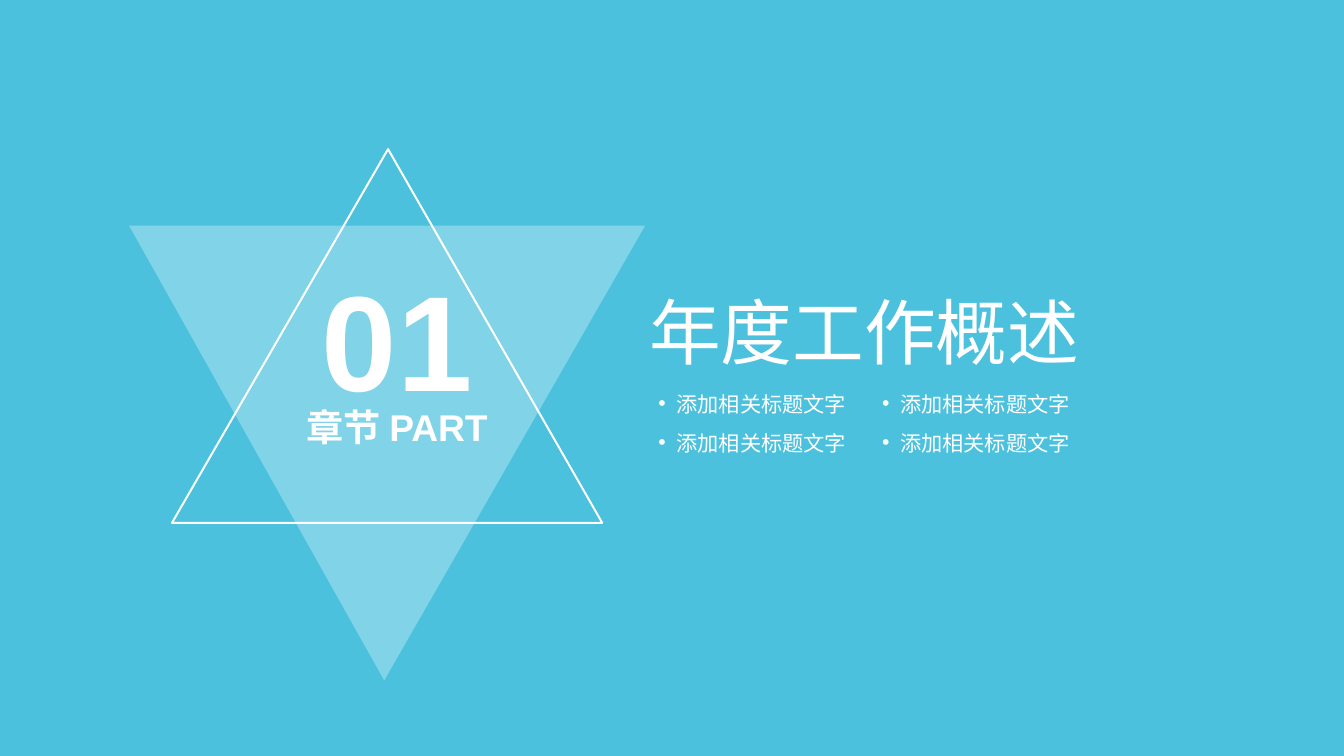
from itertools import product

from lxml import etree
from pptx import Presentation
from pptx import util as u
from pptx.dml.color import RGBColor
from pptx.enum import shapes, text
from pptx.oxml import ns

WIDTH, HEIGHT = 14.06, 7.91
SKY, WHITE = "4BC1DD", "FFFFFF"


def color(value):
    """Turn a hex string into a colour."""
    return RGBColor.from_string(value)


class SectionPage:
    """Hold the style and the current slide."""

    font = "Arial"

    def __init__(self, deck):
        """Add a blank slide to the deck."""
        self.page = deck.slides.add_slide(deck.slide_layouts[6])

    def backdrop(self, fill):
        """Cover the slide with one colour."""
        shape = self.page.shapes.add_shape(
            shapes.MSO_SHAPE.RECTANGLE, 0, 0, u.Inches(WIDTH), u.Inches(HEIGHT))
        self.finish(shape, fill=fill)

    def triangle(self, corners, **look):
        """Draw a triangle through three corners."""
        points = [(u.Inches(x), u.Inches(y)) for x, y in corners]
        builder = self.page.shapes.build_freeform(*points[0])
        builder.add_line_segments(points[1:], close=True)
        self.finish(builder.convert_to_shape(), **look)

    def finish(self, shape, fill=None, opacity=100, line=None, weight=1.5):
        """Set the fill and outline of a shape."""
        shape.shadow.inherit = False
        if fill:
            shape.fill.solid()
            shape.fill.fore_color.rgb = color(fill)
            if opacity < 100:
                tint = shape._element.spPr.find(".//" + ns.qn("a:srgbClr"))
                etree.SubElement(tint, ns.qn("a:alpha"), val=str(opacity * 1000))
        else:
            shape.fill.background()
        if line:
            shape.line.color.rgb = color(line)
            shape.line.width = u.Pt(weight)
        else:
            shape.line.fill.background()

    def label(self, words, left, top, width, height, size,
              bold=False, align=text.PP_ALIGN.LEFT):
        """Add a wrapped white line of text without margins."""
        box, para = self.text_box(words, left, top, width, height, size)
        frame = box.text_frame
        frame.word_wrap = True
        frame.margin_left = frame.margin_right = 0
        frame.margin_top = frame.margin_bottom = 0
        para.font.bold = bold
        para.alignment = align

    def bullet(self, words, left, top):
        """Add a white bulleted line."""
        box, para = self.text_box(words, left, top, 2.19, 0.37, 16)
        box.text_frame.word_wrap = False
        para.level = 1
        props = para._p.get_or_add_pPr()
        indent = u.Inches(0.19)
        props.set("marL", str(indent))
        props.set("indent", str(-indent))
        mark = etree.Element(ns.qn("a:buFont"), typeface=self.font)
        props.insert(0, mark)
        mark.addnext(etree.Element(ns.qn("a:buChar"), char="•"))

    def text_box(self, words, left, top, width, height, size):
        """Add a text box and return it with its paragraph."""
        box = self.page.shapes.add_textbox(
            *(u.Inches(length) for length in (left, top, width, height)))
        box.text_frame.auto_size = text.MSO_AUTO_SIZE.SHAPE_TO_FIT_TEXT
        para = box.text_frame.paragraphs[0]
        para.text = words
        para.font.name = self.font
        para.font.size = u.Pt(size)
        para.font.color.rgb = color(WHITE)
        return box, para


def main():
    """Build the section slide and save it."""
    deck = Presentation()
    deck.slide_width, deck.slide_height = u.Inches(WIDTH), u.Inches(HEIGHT)
    section = SectionPage(deck)
    center = text.PP_ALIGN.CENTER

    section.backdrop(SKY)
    section.triangle([(1.35, 2.36), (6.75, 2.36), (4.02, 7.12)],
                     fill=WHITE, opacity=30)
    section.triangle([(4.06, 1.56), (6.3, 5.47), (1.8, 5.47)], line=WHITE)

    section.label("01", 3.23, 2.68, 1.85, 1.72, 102, bold=True, align=center)
    section.label("章节 PART", 2.26, 4.23, 3.79, 0.47, 28, bold=True, align=center)
    section.label("年度工作概述", 6.79, 3.01, 4.89, 0.91, 54)

    for top, left in product((4.04, 4.45), (6.79, 9.13)):
        section.bullet("添加相关标题文字", left, top)

    deck.save("out.pptx")


if __name__ == "__main__":
    main()
